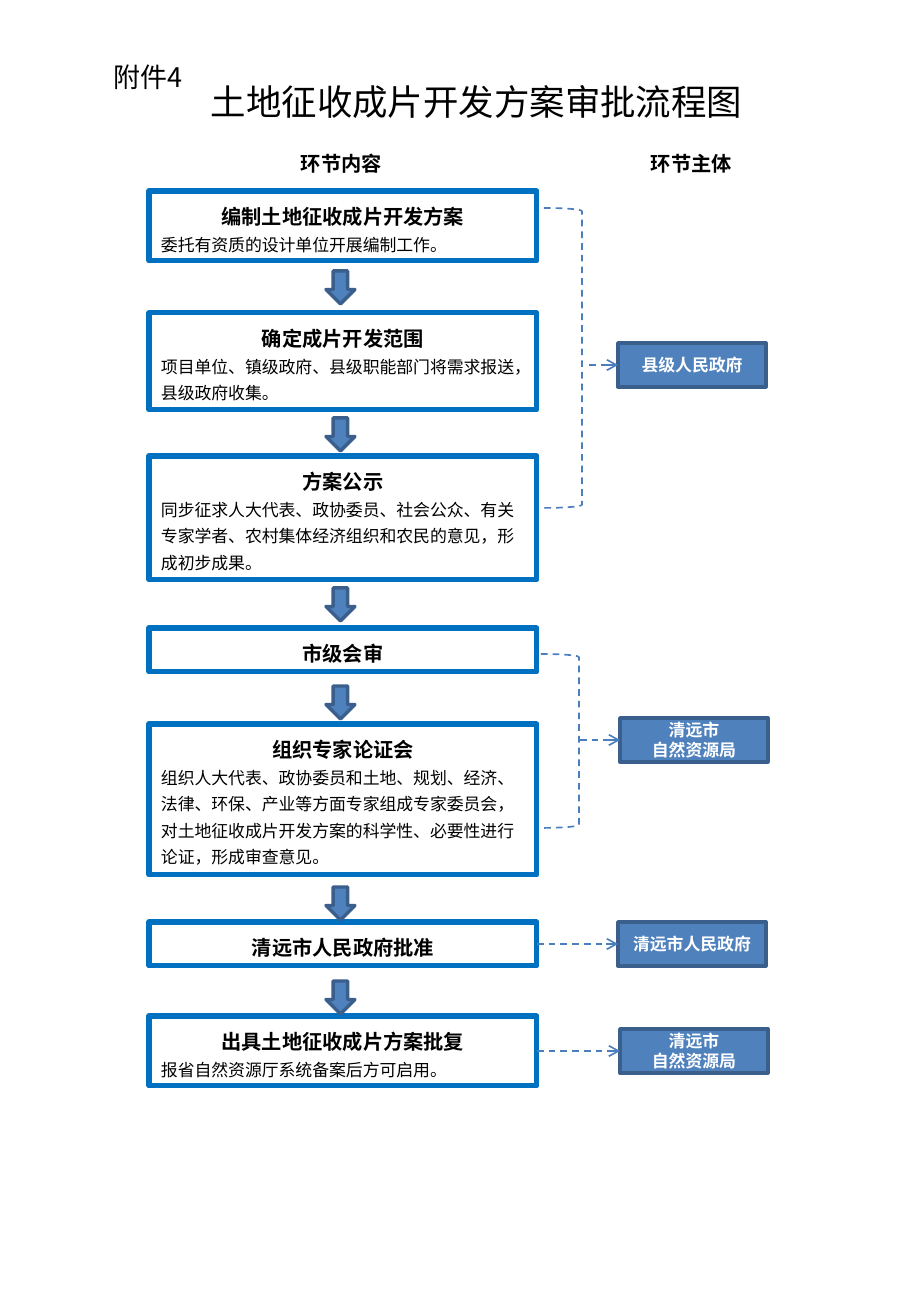
from dataclasses import dataclass

from lxml import etree
from pptx import Presentation
from pptx import util as u
from pptx.dml.color import RGBColor
from pptx.enum import dml, shapes, text
from pptx.oxml.ns import qn


@dataclass(frozen=True)
class Theme:
    font: str = "Noto Sans CJK SC"
    ink: str = "000000"
    white: str = "FFFFFF"
    step_line: str = "0070C0"
    solid: str = "4F81BD"
    solid_line: str = "3A5F8C"
    dashed: str = "4B7EBC"
    title: int = 21
    annex: int = 16
    heading: int = 12
    body: int = 10


THEME = Theme()
PX = 914400 / 121.5
LEFT, CENTER = text.PP_ALIGN.LEFT, text.PP_ALIGN.CENTER
TOP, MIDDLE = text.MSO_ANCHOR.TOP, text.MSO_ANCHOR.MIDDLE


def write(frame, lines, color=THEME.ink, anchor=TOP, spacing=1.0):
    """Fill a text frame; each line is (wording, size, bold, alignment)."""
    frame.word_wrap = True
    frame.auto_size = text.MSO_AUTO_SIZE.NONE
    frame.vertical_anchor = anchor
    for number, (wording, size, bold, align) in enumerate(lines):
        paragraph = frame.add_paragraph() if number else frame.paragraphs[0]
        paragraph.text = wording
        paragraph.alignment = align
        paragraph.line_spacing = spacing
        font = paragraph.font
        font.size, font.bold, font.name = u.Pt(size), bold, THEME.font
        font.color.rgb = RGBColor.from_string(color)
        properties = paragraph._p.pPr.find(qn("a:defRPr"))
        etree.SubElement(properties, qn("a:ea"), typeface=THEME.font)


def draw(kind, bounds, line, weight, fill=None):
    """Add a preset shape with bounds (left, top, width, height) in px."""
    shape = slide.shapes.add_shape(kind, *[round(n * PX) for n in bounds])
    shape.shadow.inherit = False
    if fill:
        shape.fill.solid()
        shape.fill.fore_color.rgb = RGBColor.from_string(fill)
    else:
        shape.fill.background()
    shape.line.color.rgb = RGBColor.from_string(line)
    shape.line.width = u.Pt(weight)
    return shape


prs = Presentation()
prs.slide_width, prs.slide_height = round(911 * PX), round(1316 * PX)
slide = prs.slides.add_slide(prs.slide_layouts[5])

# Title, annex number and column headings
title = slide.shapes.title
title.left, title.top, title.width, title.height = [round(n * PX) for n in (115, 74, 723, 55)]
write(title.text_frame, [("土地征收成片开发方案审批流程图", THEME.title, False, CENTER)])

for wording, size, bold, bounds in [
    ("附件4", THEME.annex, False, (102, 55, 117, 45)),
    ("环节内容", THEME.heading, True, (289, 145, 110, 36)),
    ("环节主体", THEME.heading, True, (639, 145, 110, 36)),
]:
    label = slide.shapes.add_textbox(*[round(n * PX) for n in bounds])
    write(label.text_frame, [(wording, size, bold, LEFT)])

# Steps of the procedure: top, height, heading, explanation
STEP_LEFT, STEP_WIDTH = 149, 388
steps = []
for top, height, heading, explanation in [
    (191, 70, "编制土地征收成片开发方案", "委托有资质的设计单位开展编制工作。"),
    (313, 97, "确定成片开发范围", "项目单位、镇级政府、县级职能部门将需求报送，县级政府收集。"),
    (456, 124, "方案公示",
     "同步征求人大代表、政协委员、社会公众、有关专家学者、农村集体经济组织和农民的意见，形成初步成果。"),
    (628, 44, "市级会审", None),
    (724, 151, "组织专家论证会",
     "组织人大代表、政协委员和土地、规划、经济、法律、环保、产业等方面专家组成专家委员会，"
     "对土地征收成片开发方案的科学性、必要性进行论证，形成审查意见。"),
    (922, 44, "清远市人民政府批准", None),
    (1016, 70, "出具土地征收成片方案批复", "报省自然资源厅系统备案后方可启用。"),
]:
    step = draw(shapes.MSO_SHAPE.RECTANGLE, (STEP_LEFT, top, STEP_WIDTH, height),
                THEME.step_line, 3)
    lines = [(heading, THEME.heading, True, CENTER)]
    if explanation:
        lines.append((explanation, THEME.body, False, LEFT))
    write(step.text_frame, lines, spacing=1.3)
    steps.append(step)

for top in (271, 418, 588, 686, 887, 981):
    draw(shapes.MSO_SHAPE.DOWN_ARROW, (326, top, 29, 33), THEME.solid_line, 2, THEME.solid)

# Brackets that gather several steps under one authority
for bounds in [(544, 208, 38, 300), (541, 654, 38, 174)]:
    bracket = draw(shapes.MSO_SHAPE.RIGHT_BRACKET, bounds, THEME.dashed, 1)
    bracket.line.dash_style = dml.MSO_LINE.DASH

# Authorities, each with an arrow from a step or from a bracket's px position
AUTHORITY_WIDTH, AUTHORITY_HEIGHT = 148, 44
for left, top, names, source_step, source_x in [
    (618, 343, ["县级人民政府"], None, 589),
    (620, 718, ["清远市", "自然资源局"], None, 580),
    (618, 922, ["清远市人民政府"], steps[5], STEP_LEFT + STEP_WIDTH),
    (620, 1029, ["清远市", "自然资源局"], steps[6], STEP_LEFT + STEP_WIDTH),
]:
    authority = draw(shapes.MSO_SHAPE.RECTANGLE, (left, top, AUTHORITY_WIDTH, AUTHORITY_HEIGHT),
                     THEME.solid_line, 2, THEME.solid)
    write(authority.text_frame, [(name, THEME.body, True, CENTER) for name in names],
          THEME.white, MIDDLE)
    middle = round((top + AUTHORITY_HEIGHT / 2) * PX)
    arrow = slide.shapes.add_connector(shapes.MSO_CONNECTOR.STRAIGHT, round(source_x * PX),
                                       middle, round(left * PX), middle)
    if source_step:
        arrow.begin_connect(source_step, 3)
    arrow.end_connect(authority, 1)
    arrow.line.color.rgb = RGBColor.from_string(THEME.dashed)
    arrow.line.width = u.Pt(1)
    arrow.line.dash_style = dml.MSO_LINE.DASH
    etree.SubElement(arrow.line._get_or_add_ln(), qn("a:tailEnd"), type="arrow")
    etree.SubElement(arrow._element.spPr, qn("a:effectLst"))

prs.save("out.pptx")
